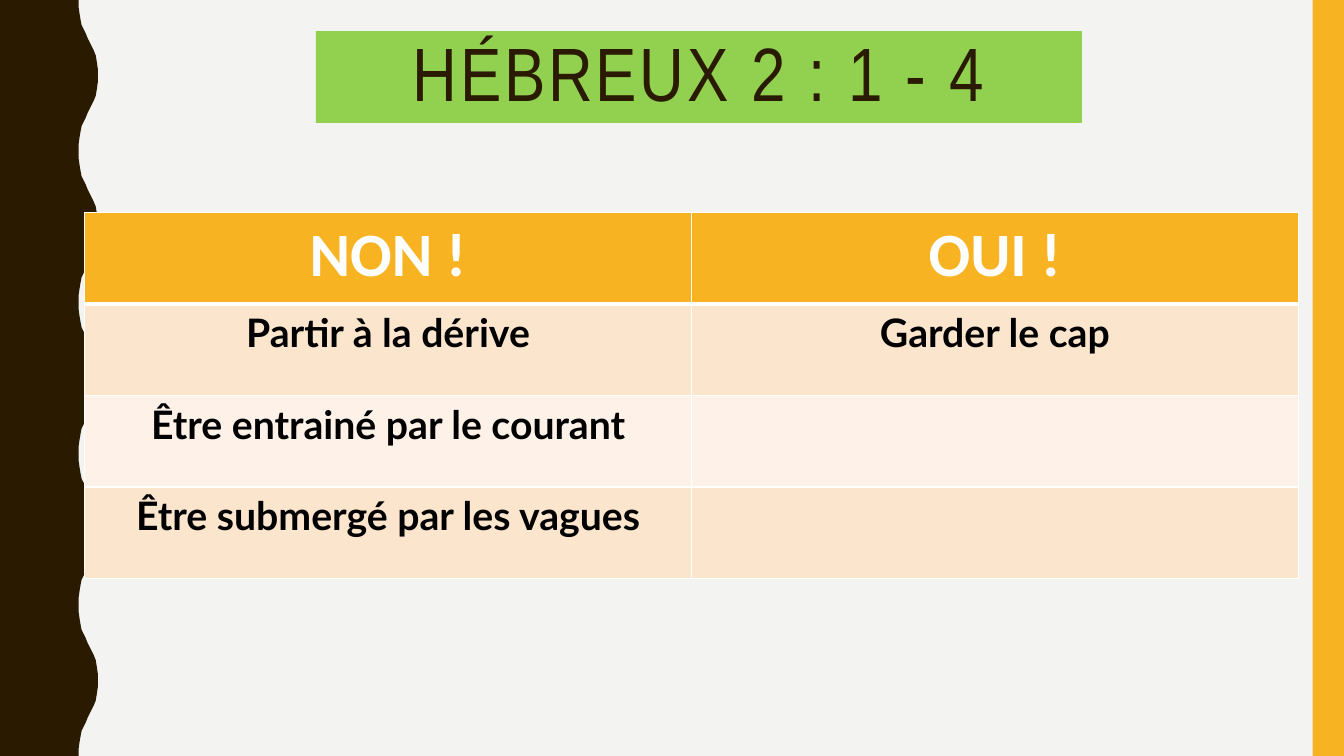
import pptx
import pptx.dml.color
import pptx.enum.shapes
import pptx.enum.text
import pptx.oxml
import pptx.oxml.ns
import pptx.util
from dataclasses import dataclass


@dataclass(frozen=True)
class Theme:
    background: str = "F3F3F2"
    brown: str = "2A1A00"
    amber: str = "F8B323"
    green: str = "92D050"
    white: str = "FFFFFF"
    black: str = "000000"
    bands: tuple = ("FCE5CD", "FEF2E8")
    title_size: int = 54
    header_size: int = 44
    body_size: int = 28


theme = Theme()
color = pptx.dml.color.RGBColor.from_string

presentation = pptx.Presentation()
presentation.slide_width = pptx.util.Inches(13.33)
presentation.slide_height = pptx.util.Inches(7.5)
slide = presentation.slides.add_slide(presentation.slide_layouts[5])
slide.background.fill.solid()
slide.background.fill.fore_color.rgb = color(theme.background)


def area(left, top, width, height):
    """Turn percentages of the slide into left, top, width and height."""
    column, row = presentation.slide_width / 100, presentation.slide_height / 100
    return [round(share * unit) for share, unit in
            zip((left, top, width, height), (column, row, column, row))]


def write(text_frame, text, *, font, size, fill, bold=False, tracking=0, line_spacing=1.0):
    paragraph = text_frame.paragraphs[0]
    paragraph.alignment = pptx.enum.text.PP_ALIGN.CENTER
    paragraph.line_spacing = line_spacing
    run = paragraph.add_run()
    run.text = text
    run.font.name = font
    run.font.size = pptx.util.Pt(size)
    run.font.bold = bold
    run.font.color.rgb = color(fill)
    if tracking:
        run.font._element.set("spc", str(tracking * 100))


# Wavy left edge, in hundredths of an inch: half a wave, mirrored and repeated
half_wave = [(78, 0), (78, 7), (79, 14), (80, 20), (81, 25), (83, 29), (85, 33), (87, 38),
             (89, 42), (91, 46), (93, 50), (95, 55), (96, 61), (97, 68), (97, 75)]
wave_height = 150
wave = half_wave + [(x, wave_height - y) for x, y in reversed(half_wave[:-1])]
edge = [(x, y + wave_height * turn) for turn in range(5) for x, y in wave]
builder = slide.shapes.build_freeform(0, 0, scale=pptx.util.Inches(1) / 100)
builder.add_line_segments(edge + [(0, 750)], close=True)
wavy_band = builder.convert_to_shape()

amber_bar = slide.shapes.add_shape(
    pptx.enum.shapes.MSO_SHAPE.RECTANGLE, *area(97.67, 0, 2.33, 100))
for shape, fill in ((wavy_band, theme.brown), (amber_bar, theme.amber)):
    shape.shadow.inherit = False
    shape.fill.solid()
    shape.fill.fore_color.rgb = color(fill)
    shape.line.fill.background()

title = slide.shapes.title
title.left, title.top, title.width, title.height = area(23.5, 4.13, 57, 12.13)
title.fill.solid()
title.fill.fore_color.rgb = color(theme.green)
title.text_frame.word_wrap = True
title.text_frame.auto_size = pptx.enum.text.MSO_AUTO_SIZE.NONE
title.text_frame.vertical_anchor = pptx.enum.text.MSO_ANCHOR.MIDDLE
write(title.text_frame, "HÉBREUX 2 : 1 - 4", font="Arial Narrow", size=theme.title_size,
      fill=theme.brown, tracking=2, line_spacing=0.9)

rows = [
    ("NON !", "OUI !"),
    ("Partir à la dérive", "Garder le cap"),
    ("Être entrainé par le courant", ""),
    ("Être submergé par les vagues", ""),
]
table = slide.shapes.add_table(len(rows), 2, *area(6.3, 28.13, 90.3, 48.4)).table
for row_index, texts in enumerate(rows):
    is_header = row_index == 0
    for column_index, text in enumerate(texts):
        cell = table.cell(row_index, column_index)
        properties = cell._tc.get_or_add_tcPr()
        widths = {"L": 1, "R": 1, "T": 3 if row_index == 1 else 1, "B": 3 if is_header else 1}
        for side, width in widths.items():
            properties.append(pptx.oxml.parse_xml(
                f'<a:ln{side} {pptx.oxml.ns.nsdecls("a")} w="{pptx.util.Pt(width)}">'
                f'<a:solidFill><a:srgbClr val="{theme.white}"/></a:solidFill></a:ln{side}>'))
        cell.fill.solid()
        cell.fill.fore_color.rgb = color(
            theme.amber if is_header else theme.bands[(row_index - 1) % 2])
        if text:
            write(cell.text_frame, text, bold=True,
                  font="Calibri" if is_header else "Lato",
                  size=theme.header_size if is_header else theme.body_size,
                  fill=theme.white if is_header else theme.black)

presentation.save("out.pptx")
